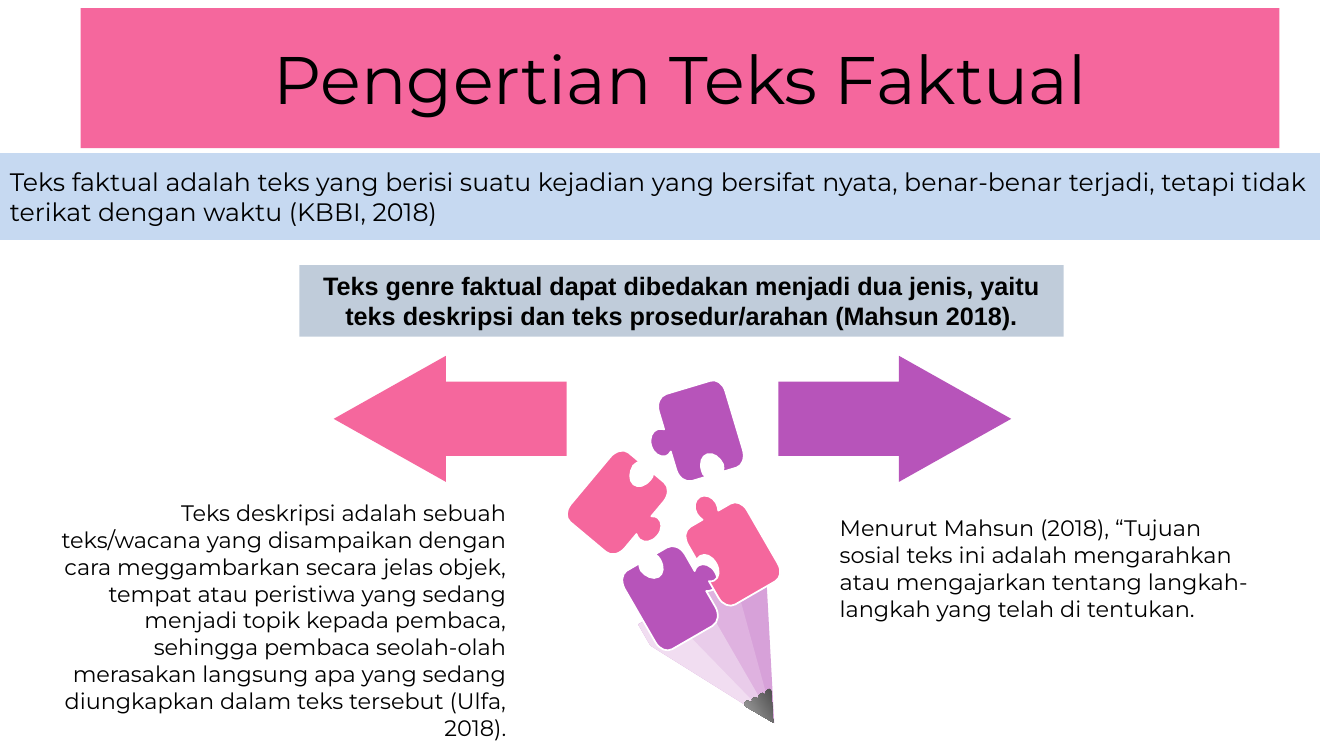
from lxml import etree
from pptx import Presentation
from pptx.dml.color import RGBColor
from pptx.enum.shapes import MSO_SHAPE
from pptx.enum.text import MSO_ANCHOR, PP_ALIGN
from pptx.oxml.ns import qn
from pptx.util import Inches, Pt

LEFT, CENTER, RIGHT = PP_ALIGN.LEFT, PP_ALIGN.CENTER, PP_ALIGN.RIGHT
MIDDLE, TOP = MSO_ANCHOR.MIDDLE, MSO_ANCHOR.TOP
RECT = MSO_SHAPE.RECTANGLE

COLORS = {
    "pink": "F5679D", "purple": "B754BA", "white": "FFFFFF", "black": "000000",
    "sky": "C6D9F1", "navy": "1F497D",
    "lead dark": "474747", "lead light": "B0B0B0",
    "wood 1": "D7A1D9", "wood 2": "DFB2E0", "wood 3": "E9CCEA", "wood 4": "F1DDF1",
}
COLORS = {name: RGBColor.from_string(value) for name, value in COLORS.items()}

prs = Presentation()
prs.slide_width, prs.slide_height = Inches(13.33), Inches(7.5)
slide = prs.slides.add_slide(prs.slide_layouts[6])

# The slide is a grid of 100 columns by 100 rows
COL, ROW = prs.slide_width / 100, prs.slide_height / 100


def add_block(kind, box, color, opacity=100):
    """Place a filled preset shape; box is left, top, width, height in grid units."""
    left, top, width, height = box
    block = slide.shapes.add_shape(kind, int(left * COL), int(top * ROW),
                                   int(width * COL), int(height * ROW))
    block.shadow.inherit = False
    block.line.fill.background()
    block.fill.solid()
    block.fill.fore_color.rgb = COLORS[color]
    if opacity < 100:
        tint = block.fill._xPr.find(".//" + qn("a:srgbClr"))
        etree.SubElement(tint, qn("a:alpha"), val=str(opacity * 1000))
    return block


def add_outline(outline, center, rotation, color):
    """Draw an outline given in inches around its center.

    A pair is a corner; six numbers are a Bezier curve from the last point.
    """
    ends = [(Inches(step[-2]), Inches(step[-1])) for step in outline]
    builder = slide.shapes.build_freeform(*ends[0])
    builder.add_line_segments(ends[1:], close=True)
    part = builder.convert_to_shape(int(center[0] * COL), int(center[1] * ROW))
    # Turn the segments with six numbers into curves
    left, top = min(x for x, y in ends), min(y for x, y in ends)
    segments = part._element.findall(".//" + qn("a:lnTo"))
    for step, segment in zip(outline[1:], segments):
        if len(step) == 6:
            segment.tag = qn("a:cubicBezTo")
            segment.clear()
            for x, y in zip(step[::2], step[1::2]):
                etree.SubElement(segment, qn("a:pt"), x=str(Inches(x) - left),
                                 y=str(Inches(y) - top))
    part.rotation = rotation
    part.shadow.inherit = False
    part.line.fill.background()
    part.fill.solid()
    part.fill.fore_color.rgb = COLORS[color]
    return part


# Arrows to the two kinds of text
for kind, left, color in [(MSO_SHAPE.LEFT_ARROW, 24.83, "pink"),
                          (MSO_SHAPE.RIGHT_ARROW, 57.91, "purple")]:
    arrow = add_block(kind, (left, 47.07, 17.33, 16.67), color)
    arrow.adjustments[0], arrow.adjustments[1] = 0.59, 0.89

# Text panels: box, color, opacity, anchor, alignment, font, size, bold, words
panels = [
    ((61.74, 65.47, 32.26, 19.33), "white", 79, MIDDLE, LEFT, "Montserrat", 16, False,
     "Menurut Mahsun (2018), “Tujuan sosial teks ini adalah mengarahkan atau "
     "mengajarkan tentang langkah-langkah yang telah di tentukan."),
    ((2.18, 65.2, 36.23, 33.6), "white", 88, MIDDLE, RIGHT, "Montserrat", 16, False,
     "Teks deskripsi adalah sebuah teks/wacana yang disampaikan dengan cara "
     "meggambarkan secara jelas objek, tempat atau peristiwa yang sedang menjadi "
     "topik kepada pembaca, sehingga pembaca seolah-olah merasakan langsung apa "
     "yang sedang diungkapkan dalam teks tersebut (Ulfa, 2018)."),
    ((6, 1.07, 89.2, 18.53), "pink", 100, MIDDLE, CENTER, "Montserrat", 48, False,
     "Pengertian Teks Faktual"),
    ((0, 20.27, 98.2, 11.47), "sky", 100, MIDDLE, LEFT, "Montserrat", 18, False,
     "Teks faktual adalah teks yang berisi suatu kejadian yang bersifat nyata, "
     "benar-benar terjadi, tetapi tidak terikat dengan waktu (KBBI, 2018)"),
    ((22.28, 35.07, 56.86, 9.47), "navy", 28, TOP, CENTER, "Arial", 18, True,
     "Teks genre faktual dapat dibedakan menjadi dua jenis, yaitu teks deskripsi "
     "dan teks prosedur/arahan (Mahsun 2018)."),
]
for box, color, opacity, anchor, align, font, size, bold, words in panels:
    frame = add_block(RECT, box, color, opacity).text_frame
    frame.word_wrap = True
    frame.vertical_anchor = anchor
    frame.text = words
    paragraph = frame.paragraphs[0]
    paragraph.alignment = align
    run_font = paragraph.runs[0].font
    run_font.name, run_font.size, run_font.bold = font, Pt(size), bold
    run_font.color.rgb = COLORS["black"]

# Pencil wood: bands that share the left edge and the tip
PENCIL_TILT = 330
TIP_X, TIP_Y, EDGE = 0.68, 1.52, 0.24
bands = [(1.36, "wood 1", (54.76, 86.87)), (1.03, "wood 2", (53.68, 87.9)),
         (0.68, "wood 3", (52.55, 89.13)), (0.34, "wood 4", (52.55, 89.13))]
for width, color, center in bands:
    middle = max(width, TIP_X) / 2
    corners = [(0, 0), (width, 0), (width, 0.18), (TIP_X, TIP_Y), (0, EDGE)]
    wood = [(x - middle, y - TIP_Y / 2) for x, y in corners]
    add_outline(wood, center, PENCIL_TILT, color)

# Pencil lead with a scalloped edge
lead_outline = [
    (-0.15, -0.11), (-0.15, -0.14, -0.13, -0.15, -0.11, -0.15),
    (-0.1, -0.14, -0.08, -0.13, -0.07, -0.11), (-0.07, -0.13, -0.05, -0.14, -0.04, -0.14),
    (-0.02, -0.14, 0, -0.13, 0, -0.11), (0, -0.13, 0.02, -0.14, 0.04, -0.14),
    (0.06, -0.15, 0.08, -0.13, 0.08, -0.11), (0.08, -0.13, 0.1, -0.14, 0.12, -0.14),
    (0.14, -0.15, 0.15, -0.14, 0.15, -0.11), (0.01, 0.17),
]
lead = add_outline(lead_outline, (56.87, 93.67), PENCIL_TILT, "lead dark")
lead.fill.gradient()
lead.fill.gradient_angle = 180
for stop, position, color in zip(lead.fill.gradient_stops, (0.15, 1),
                                 ("lead dark", "lead light")):
    stop.position = position
    stop.color.rgb = COLORS[color]

# Puzzle pieces: three of the wide form and one of the tall form
wide_piece = [
    (-0.31, -0.43), (0.3, -0.43), (0.38, -0.43, 0.45, -0.38, 0.45, -0.32), (0.45, -0.18),
    (0.43, -0.19, 0.4, -0.2, 0.38, -0.2), (0.31, -0.19, 0.24, -0.14, 0.24, -0.08),
    (0.24, -0.02, 0.3, 0.02, 0.38, 0.02), (0.4, 0.02, 0.43, 0.02, 0.45, 0), (0.45, 0.14),
    (0.45, 0.21, 0.38, 0.26, 0.3, 0.26), (0.11, 0.26),
    (0.13, 0.28, 0.14, 0.3, 0.14, 0.32), (0.14, 0.38, 0.08, 0.43, 0, 0.43),
    (-0.08, 0.43, -0.14, 0.38, -0.14, 0.32), (-0.14, 0.3, -0.13, 0.28, -0.12, 0.26),
    (-0.3, 0.26), (-0.38, 0.26, -0.45, 0.21, -0.45, 0.14), (-0.45, -0.32),
    (-0.45, -0.38, -0.39, -0.43, -0.31, -0.43),
]
tall_piece = [
    (-0.23, -0.55), (0.23, -0.55), (0.29, -0.55, 0.34, -0.49, 0.34, -0.41), (0.34, -0.22),
    (0.33, -0.23, 0.31, -0.24, 0.29, -0.24), (0.23, -0.24, 0.19, -0.18, 0.19, -0.1),
    (0.19, -0.02, 0.23, 0.04, 0.29, 0.04), (0.31, 0.04, 0.33, 0.03, 0.34, 0.02), (0.34, 0.19),
    (0.34, 0.28, 0.29, 0.34, 0.23, 0.34), (0.09, 0.34),
    (0.1, 0.36, 0.11, 0.39, 0.11, 0.42), (0.11, 0.49, 0.06, 0.55, 0, 0.55),
    (-0.06, 0.55, -0.11, 0.49, -0.11, 0.42), (-0.11, 0.39, -0.1, 0.36, -0.09, 0.34),
    (-0.23, 0.34), (-0.29, 0.34, -0.34, 0.28, -0.34, 0.2), (-0.34, -0.41),
    (-0.34, -0.49, -0.29, -0.55, -0.23, -0.55),
]
for outline, center, rotation, color in [
    (wide_piece, (50.41, 78.53), 240, "purple"),
    (wide_piece, (51.54, 57.33), 73.3, "purple"),
    (tall_piece, (54.13, 72.07), 150, "pink"),
    (wide_piece, (46.44, 67.2), 309.9, "pink"),
]:
    piece = add_outline(outline, center, rotation, color)
    piece.line.color.rgb = COLORS["white"]
    piece.line.width = Pt(1.25)

prs.save("out.pptx")
